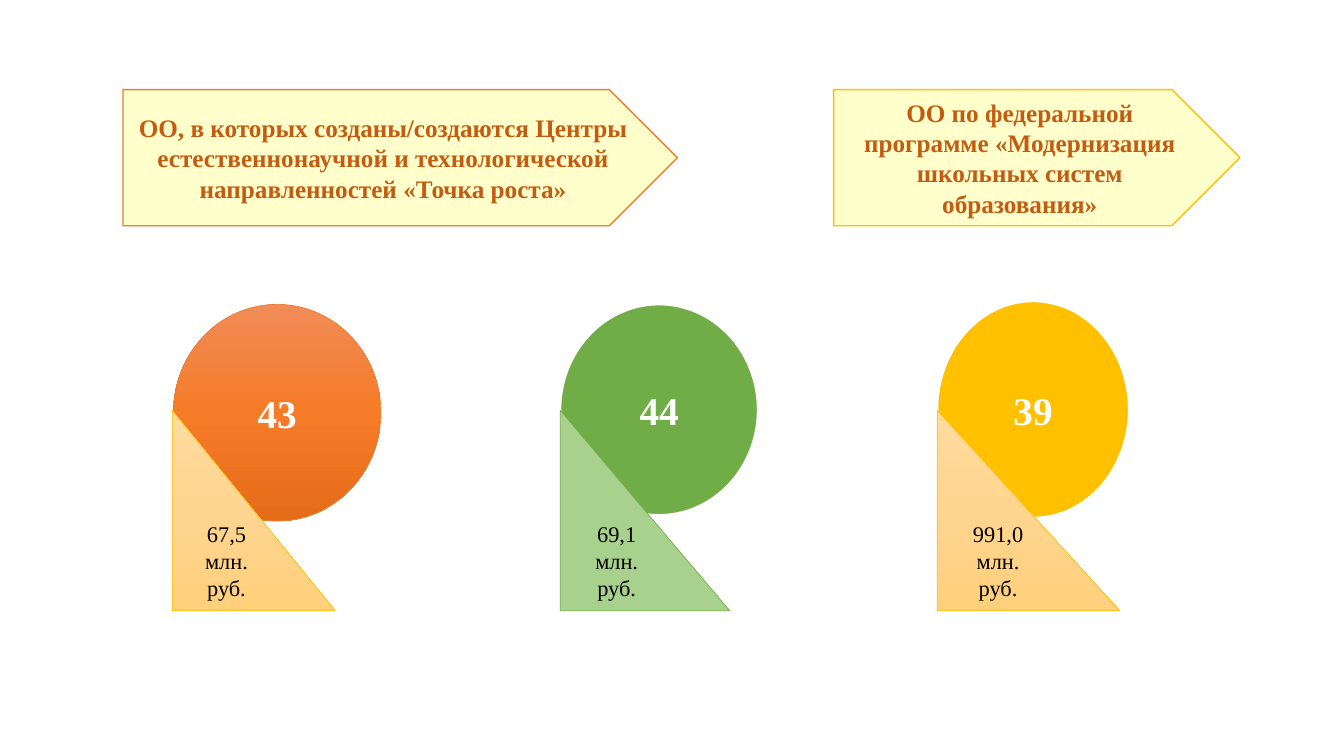
from copy import deepcopy

from pptx import Presentation, util as u
from pptx.dml.color import RGBColor
from pptx.enum import shapes, text
from pptx.oxml.ns import qn


def paint(target, *colors):
    if len(colors) == 1:
        target.solid()
        target.fore_color.rgb = RGBColor.from_string(colors[0])
        return
    target.gradient()
    target.gradient_angle = 270
    stops = target.gradient_stops
    for stop, color, position in zip(stops, colors[::2], (0, 1)):
        stop.color.rgb = RGBColor.from_string(color)
        stop.position = position


def add_figure(kind, box, colors, outline, outline_width, wording, font_format, font_color):
    figure = slide.shapes.add_shape(kind, *(u.Cm(value) for value in box))
    figure.shadow.inherit = False
    paint(figure.fill, *colors)
    if len(colors) == 3:
        stop_list = figure._element.spPr.find(qn("a:gradFill")).find(qn("a:gsLst"))
        stop_list.insert(1, deepcopy(stop_list[0]))
        middle = figure.fill.gradient_stops[1]
        middle.position = 0.5
        middle.color.rgb = RGBColor.from_string(colors[1])
    paint(figure.line.fill, outline)
    figure.line.width = u.Pt(outline_width)
    figure.text_frame.vertical_anchor = text.MSO_ANCHOR.MIDDLE
    paragraph = figure.text_frame.paragraphs[0]
    paragraph.alignment = text.PP_ALIGN.CENTER
    run = paragraph.add_run()
    run.text = wording
    for name, value in font_format.items():
        setattr(run.font, name, value)
    paint(run.font.fill, font_color)


deck = Presentation()
deck.slide_width, deck.slide_height = u.Cm(33.87), u.Cm(19.05)
slide = deck.slides.add_slide(deck.slide_layouts[6])

font_name = "Times New Roman"
count_font = {"name": font_name, "size": u.Pt(28), "bold": True}
cost_font = {"name": font_name, "size": u.Pt(16), "bold": False}
heading_font = {"name": font_name, "size": u.Pt(18), "bold": True}

orange = ("F18C57", "F67B28", "E56C19")
peach = ("FFDB9E", "FFD590", "FFD07C")
cost_top, cost_height = 10.34, 5.05

programs = [
    ("43", (4.37, 7.67, 5.23, 5.46), orange, "ED7D31", 0.5,
     "67,5 млн. руб.", 4.34, 4.11, peach, "FFC000"),
    ("44", (14.12, 7.67, 4.98, 5.31), ("70AD47",), "FFFFFF", 1.5,
     "69,1 млн. руб.", 14.12, 4.27, ("A9D18E",), "70AD47"),
    ("39", (23.62, 7.59, 4.83, 5.46), ("FFC000",), "FFFFFF", 1.5,
     "991,0 млн. руб.", 23.62, 4.6, peach, "FFC000"),
]
for (count, circle, circle_colors, circle_outline, circle_width,
     cost, cost_left, cost_width, cost_colors, cost_outline) in programs:
    add_figure(shapes.MSO_SHAPE.OVAL, circle, circle_colors, circle_outline,
               circle_width, count, count_font, "FFFFFF")
    add_figure(shapes.MSO_SHAPE.RIGHT_TRIANGLE,
               (cost_left, cost_top, cost_width, cost_height),
               cost_colors, cost_outline, 0.5, cost, cost_font, "000000")

headings = [
    (3.1, 13.97, "ED7D31",
     "ОО, в которых созданы/создаются Центры естественнонаучной "
     "и технологической направленностей «Точка роста»"),
    (21.01, 10.24, "FFC000",
     "ОО по федеральной программе «Модернизация школьных систем образования»"),
]
for left, width, outline, heading in headings:
    add_figure(shapes.MSO_SHAPE.PENTAGON, (left, 2.26, width, 3.43),
               ("FFFFCC",), outline, 1, heading, heading_font, "C55A11")

deck.save("out.pptx")
